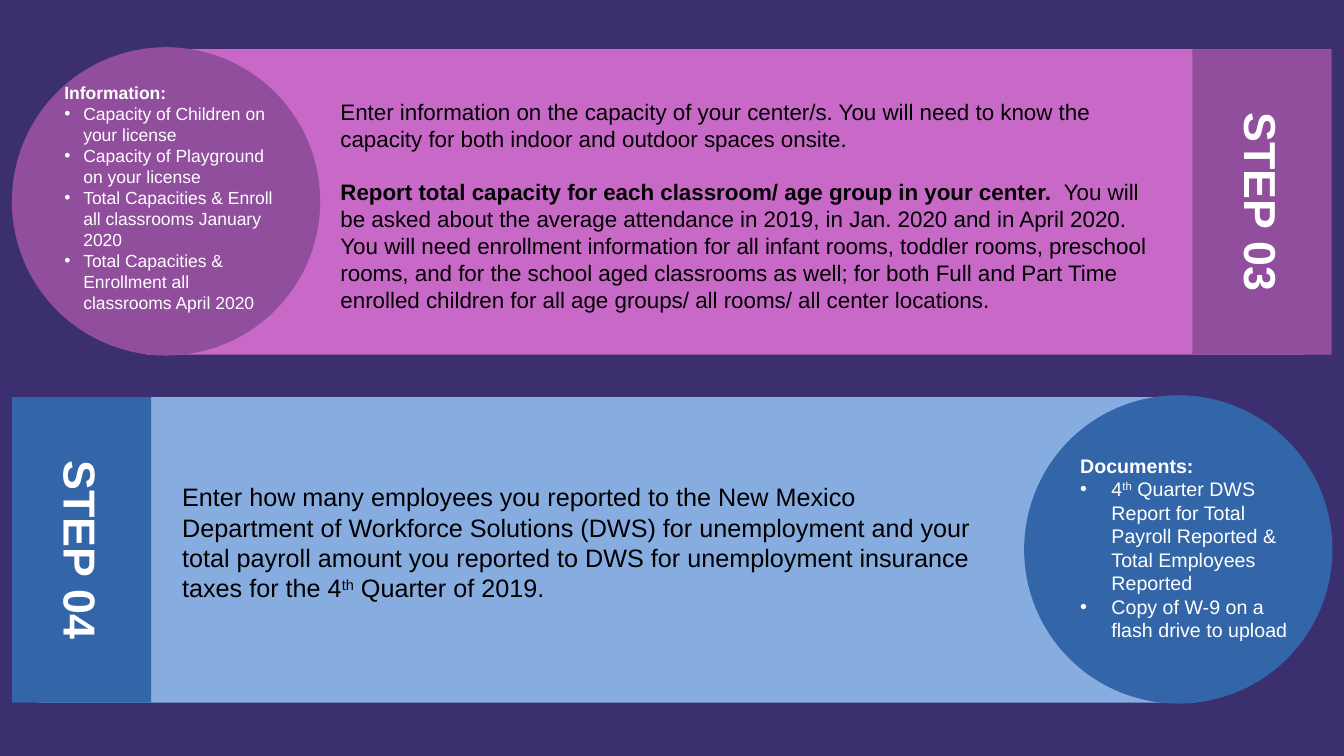
import pptx
import pptx.util
import pptx.dml.color
import pptx.enum.shapes
import pptx.enum.text
import pptx.oxml.ns
import lxml.etree

Cm, Pt = pptx.util.Cm, pptx.util.Pt
SHAPE = pptx.enum.shapes.MSO_SHAPE
ALIGN = pptx.enum.text.PP_ALIGN
ANCHOR = pptx.enum.text.MSO_ANCHOR


def colour(hex_string):
    return pptx.dml.color.RGBColor.from_string(hex_string)


def write(box, place, paragraphs, size, ink, indent=0, align=ALIGN.LEFT,
          anchor=ANCHOR.TOP, gap=0):
    """Place a text holder and fill it; paragraphs after the first are bulleted if indent is set."""
    box.left, box.top, box.width, box.height = [Cm(length) for length in place]
    frame = box.text_frame
    frame.word_wrap = True
    frame.auto_size = pptx.enum.text.MSO_AUTO_SIZE.NONE
    frame.vertical_anchor = anchor
    frame.margin_left = frame.margin_right = Cm(0.25)
    frame.margin_top = frame.margin_bottom = Cm(0.13)
    for number, runs in enumerate(paragraphs):
        para = frame.add_paragraph() if number else frame.paragraphs[0]
        para.alignment = align
        para.line_spacing = 1.0
        para.space_before = Pt(gap if number else 0)
        para.space_after = Pt(0)
        bulleted = indent and number
        properties = para._p.get_or_add_pPr()
        properties.set("marL", str(Cm(indent) if bulleted else 0))
        properties.set("indent", str(-Cm(indent) if bulleted else 0))
        bullet = lxml.etree.SubElement(
            properties, pptx.oxml.ns.qn("a:buChar" if bulleted else "a:buNone"))
        if bulleted:
            bullet.set("char", "•")
        for text, style in runs:
            span = para.add_run()
            span.text = text
            span.font.name = "Arial"
            span.font.size = Pt(size)
            span.font.bold = style == "bold"
            span.font.color.rgb = colour(ink)
            if style == "superscript":
                span._r.get_or_add_rPr().set("baseline", "30000")


deck = pptx.Presentation()
deck.slide_width, deck.slide_height = Cm(33.87), Cm(19.05)
page = deck.slides.add_slide(deck.slide_layouts.get_by_name("Two Content"))
page.background.fill.solid()
page.background.fill.fore_color.rgb = colour("3B2F70")
title, first_list, second_list = page.placeholders

BAND_WIDTH, BAND_HEIGHT, TAB_WIDTH, CIRCLE = 29.16, 7.7, 3.51, 7.77
LABEL_DEPTH = 1.88

steps = [
    dict(
        label="STEP 03", label_holder=title, list_holder=first_list,
        top=1.24, band_left=3.68, circle_left=0.3, tab_left=30.05,
        light="C869C7", dark="914E9D",
        text_place=(8.33, 2.34, 21.26, 5.74), text_size=16,
        text=[
            [("Enter information on the capacity of your center/s. You will need to know "
              "the capacity for both indoor and outdoor spaces onsite.", "plain")],
            [("Report total capacity for each classroom/ age group in your center. ", "bold"),
             (" You will be asked about the average attendance in 2019, in Jan. 2020 and in "
              "April 2020.  You will need enrollment information for all infant rooms, toddler "
              "rooms, preschool rooms, and for the school aged classrooms as well; for both "
              "Full and Part Time enrolled children for all age groups/ all rooms/ all center "
              "locations.", "plain")],
        ],
        list_place=(1.37, 1.93, 5.92, 6.15), list_size=12.5, list_indent=0.48,
        items=[
            [("Information:", "bold")],
            [("Capacity of Children on your license", "plain")],
            [("Capacity of Playground on your license", "plain")],
            [("Total Capacities & Enroll all classrooms January 2020", "plain")],
            [("Total Capacities & Enrollment all classrooms April 2020", "plain")],
        ],
    ),
    dict(
        label="STEP 04", label_holder=None, list_holder=second_list,
        top=10.01, band_left=0.97, circle_left=25.81, tab_left=0.3,
        light="86ACE0", dark="3366A8",
        text_place=(4.34, 12.01, 20.88, 4.11), text_size=18,
        text=[
            [("Enter how many employees you reported to the New Mexico Department of Workforce "
              "Solutions (DWS) for unemployment and your total payroll amount you reported to "
              "DWS for unemployment insurance taxes for the 4", "plain"),
             ("th", "superscript"), (" Quarter of 2019.", "plain")],
        ],
        list_place=(26.97, 11.3, 6.2, 5.05), list_size=14, list_indent=0.79,
        items=[
            [("Documents:", "bold")],
            [("4", "plain"), ("th", "superscript"),
             (" Quarter DWS Report for Total Payroll Reported & Total Employees Reported",
              "plain")],
            [("Copy of W-9 on a flash drive to upload", "plain")],
        ],
    ),
]

for step in steps:
    # Band, circle and tab
    top = step["top"]
    for kind, left, upper, width, height, fill in [
        (SHAPE.RECTANGLE, step["band_left"], top, BAND_WIDTH, BAND_HEIGHT, step["light"]),
        (SHAPE.OVAL, step["circle_left"], top - 0.05, CIRCLE, CIRCLE, step["dark"]),
        (SHAPE.RECTANGLE, step["tab_left"], top, TAB_WIDTH, BAND_HEIGHT, step["dark"]),
    ]:
        panel = page.shapes.add_shape(kind, Cm(left), Cm(upper), Cm(width), Cm(height))
        panel.shadow.inherit = False
        panel.fill.solid()
        panel.fill.fore_color.rgb = colour(fill)
        panel.line.fill.background()

    # Step label, turned a quarter about the middle of the tab
    label = step["label_holder"] or page.shapes.add_textbox(0, 0, 0, 0)
    label_left = step["tab_left"] + (TAB_WIDTH - BAND_HEIGHT) / 2
    label_top = top + (BAND_HEIGHT - LABEL_DEPTH) / 2
    write(label, (label_left, label_top, BAND_HEIGHT, LABEL_DEPTH),
          [[(step["label"], "bold")]], 32, "FFFFFF", align=ALIGN.CENTER, anchor=ANCHOR.MIDDLE)
    label.rotation = 90

    # Instructions, one line apart
    instructions = page.shapes.add_textbox(0, 0, 0, 0)
    write(instructions, step["text_place"], step["text"], step["text_size"], "000000", gap=19.2)

    # List in the circle
    write(step["list_holder"], step["list_place"], step["items"], step["list_size"],
          "FFFFFF", indent=step["list_indent"])

    # Bring the text in front of the panels
    for holder in (label, instructions, step["list_holder"]):
        holder.element.getparent().append(holder.element)

deck.save("out.pptx")
